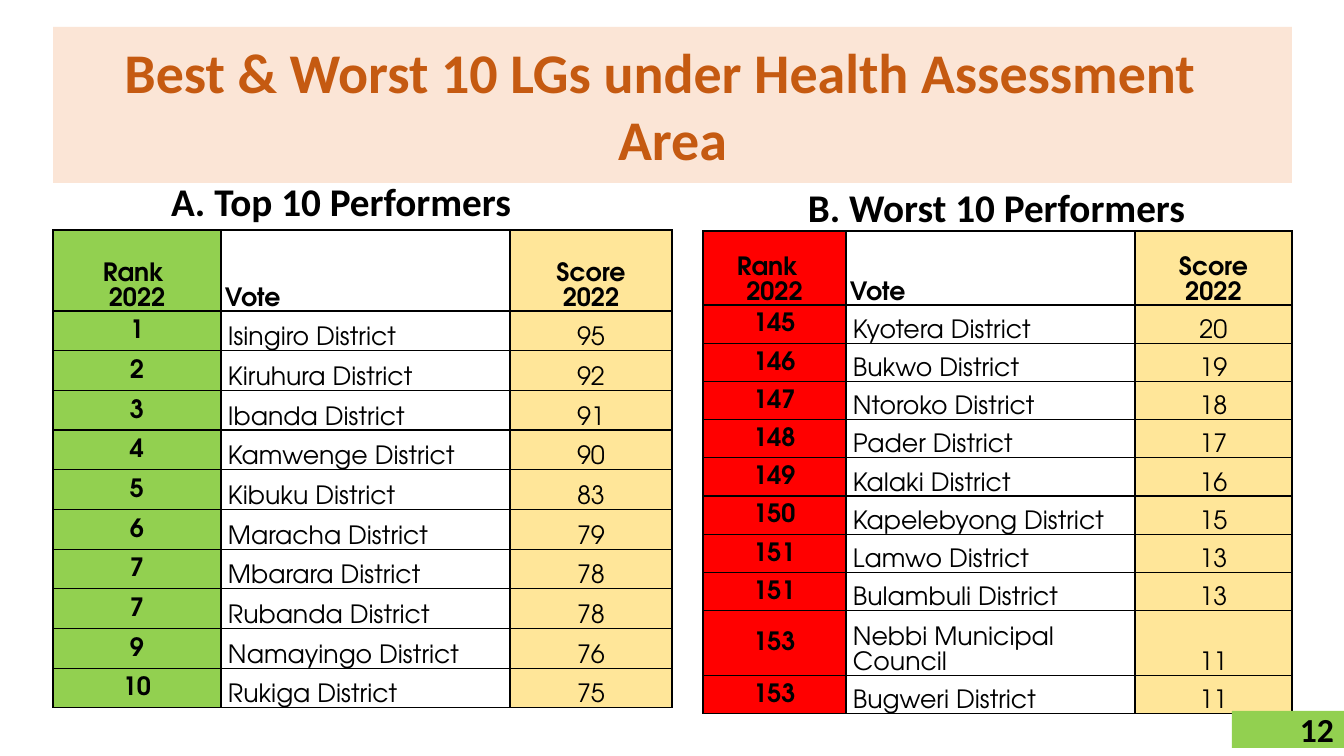
"""Build the slide ranking the best and worst ten local governments in health."""
from dataclasses import dataclass

from lxml.etree import SubElement
from pptx import Presentation
from pptx.dml.color import RGBColor
from pptx.enum.shapes import MSO_SHAPE
from pptx.enum.text import MSO_ANCHOR, MSO_AUTO_SIZE, PP_ALIGN
from pptx.oxml.ns import qn
from pptx.slide import Slide
from pptx.table import _Cell
from pptx.text.text import TextFrame
from pptx.util import Emu, Pt

EMU_PER_PX = 914400 / 100.8
HEADING_FONT, TABLE_FONT = "Calibri", "TeX Gyre Adventor"
BLACK, WHITE, GREEN, RED = "000000", "FFFFFF", "92D050", "FF0000"
SCORE_FILL, TITLE_FILL, TITLE_COLOR = "FFE699", "FBE5D6", "C55A11"


@dataclass
class Box:
    """A rectangle on the slide, in px."""
    left: int
    top: int
    width: int
    height: int


@dataclass
class Ranking:
    """A headed table of ranks, votes and scores."""
    heading: str
    heading_box: Box
    table_box: Box
    columns: tuple[int, int, int]
    header_height: int
    tall_rows: dict[int, int]
    rank_label: str
    rank_fill: str
    rows: list[tuple[int, str, int]]


RANKINGS = [
    Ranking("A. Top 10 Performers ", Box(67, 172, 557, 58), Box(53, 230, 619, 478),
            (168, 289, 162), 81, {}, "Rank \n2022", GREEN, [
                (1, "Isingiro District", 95), (2, "Kiruhura District", 92),
                (3, "Ibanda District", 91), (4, "Kamwenge District", 90),
                (5, "Kibuku District", 83), (6, "Maracha District", 79),
                (7, "Mbarara District", 78), (7, "Rubanda District", 78),
                (9, "Namayingo District", 76), (10, "Rukiga District", 75)]),
    Ranking("B. Worst 10 Performers", Box(718, 179, 557, 57), Box(703, 231, 589, 478),
            (143, 289, 157), 74, {9: 60}, "Rank  \n2022", RED, [
                (145, "Kyotera District", 20), (146, "Bukwo District", 19),
                (147, "Ntoroko District", 18), (148, "Pader District", 17),
                (149, "Kalaki District", 16), (150, "Kapelebyong District", 15),
                (151, "Lamwo District", 13), (151, "Bulambuli District", 13),
                (153, "Nebbi Municipal Council", 11), (153, "Bugweri District", 11)]),
]


def px(length: float) -> Emu:
    """Turn px into EMU."""
    return Emu(round(length * EMU_PER_PX))


def place(box: Box) -> tuple[Emu, Emu, Emu, Emu]:
    """Give left, top, width and height of a box in EMU."""
    return px(box.left), px(box.top), px(box.width), px(box.height)


def color(code: str) -> RGBColor:
    """Turn a hex string into a colour."""
    return RGBColor.from_string(code)


def write(frame: TextFrame, text: str, *, size: int, font: str = HEADING_FONT,
          fill: str = BLACK, bold: bool = True, align: PP_ALIGN = PP_ALIGN.CENTER,
          spacing: float | None = None, before: int = 0) -> None:
    """Write formatted text, one paragraph per line; a vertical tab breaks a line."""
    frame.text = text
    for paragraph in frame.paragraphs:
        paragraph.alignment = align
        paragraph.space_before = Pt(before)
        if spacing:
            paragraph.line_spacing = spacing
        for run in paragraph.runs:
            run.font.name = font
            run.font.size = Pt(size)
            run.font.bold = bold
            run.font.color.rgb = color(fill)


def add_title(slide: Slide) -> None:
    """Place and format the title."""
    title = slide.shapes.title
    title.left, title.top, title.width, title.height = place(Box(53, 27, 1239, 156))
    title.fill.solid()
    title.fill.fore_color.rgb = color(TITLE_FILL)
    title.text_frame.auto_size = MSO_AUTO_SIZE.NONE
    title.text_frame.vertical_anchor = MSO_ANCHOR.MIDDLE
    write(title.text_frame, "Best & Worst 10 LGs under Health Assessment  \vArea",
          size=40, fill=TITLE_COLOR)


def add_heading(slide: Slide, ranking: Ranking) -> None:
    """Add the heading above a table."""
    frame = slide.shapes.add_textbox(*place(ranking.heading_box)).text_frame
    frame.word_wrap = True
    frame.vertical_anchor = MSO_ANCHOR.BOTTOM
    write(frame, ranking.heading, size=28, spacing=0.9, before=10)


def style_cell(cell: _Cell, fill: str, margin: int, anchor: MSO_ANCHOR) -> None:
    """Set the borders, fill, margins and anchor of a cell."""
    properties = cell._tc.get_or_add_tcPr()
    for side in ("a:lnL", "a:lnR", "a:lnT", "a:lnB"):
        line = SubElement(properties, qn(side), w=str(Pt(1)))
        solid = SubElement(line, qn("a:solidFill"))
        SubElement(solid, qn("a:srgbClr"), val=BLACK)
    cell.fill.solid()
    cell.fill.fore_color.rgb = color(fill)
    cell.margin_left = cell.margin_right = px(margin)
    cell.margin_top = cell.margin_bottom = 0
    cell.vertical_anchor = anchor


def add_table(slide: Slide, ranking: Ranking) -> None:
    """Add the table of a ranking."""
    rows = [(ranking.rank_label, "Vote", "Score\n2022"), *ranking.rows]
    table = slide.shapes.add_table(len(rows), 3, *place(ranking.table_box)).table
    table.first_row = table.horz_banding = False
    for column, width in zip(table.columns, ranking.columns):
        column.width = px(width)
    fixed = {0: ranking.header_height, **ranking.tall_rows}
    shared = (ranking.table_box.height - sum(fixed.values())) / (len(rows) - len(fixed))
    fills = (ranking.rank_fill, WHITE, SCORE_FILL)
    for row, values in enumerate(rows):
        table.rows[row].height = px(fixed.get(row, shared))
        is_header = row == 0
        for column, value in enumerate(values):
            is_rank = column == 0
            cell = table.cell(row, column)
            style_cell(cell, fills[column], 4 if is_header else 7,
                       MSO_ANCHOR.MIDDLE if is_rank and not is_header else MSO_ANCHOR.BOTTOM)
            write(cell.text_frame, str(value), size=18, font=TABLE_FONT,
                  bold=is_header or is_rank, spacing=1.07,
                  align=PP_ALIGN.LEFT if column == 1 else PP_ALIGN.CENTER)


def add_page_number(slide: Slide) -> None:
    """Add the page number in the corner."""
    shape = slide.shapes.add_shape(MSO_SHAPE.RECTANGLE, *place(Box(1232, 711, 112, 37)))
    shape.shadow.inherit = False
    shape.fill.solid()
    shape.fill.fore_color.rgb = color(GREEN)
    shape.line.fill.background()
    shape.text_frame.vertical_anchor = MSO_ANCHOR.MIDDLE
    write(shape.text_frame, "12", size=24, align=PP_ALIGN.RIGHT)


def main() -> None:
    """Build and save the presentation."""
    presentation = Presentation()
    presentation.slide_width, presentation.slide_height = px(1344), px(756)
    slide = presentation.slides.add_slide(presentation.slide_layouts[5])
    add_title(slide)
    for ranking in RANKINGS:
        add_heading(slide, ranking)
        add_table(slide, ranking)
    add_page_number(slide)
    presentation.save("out.pptx")


if __name__ == "__main__":
    main()
